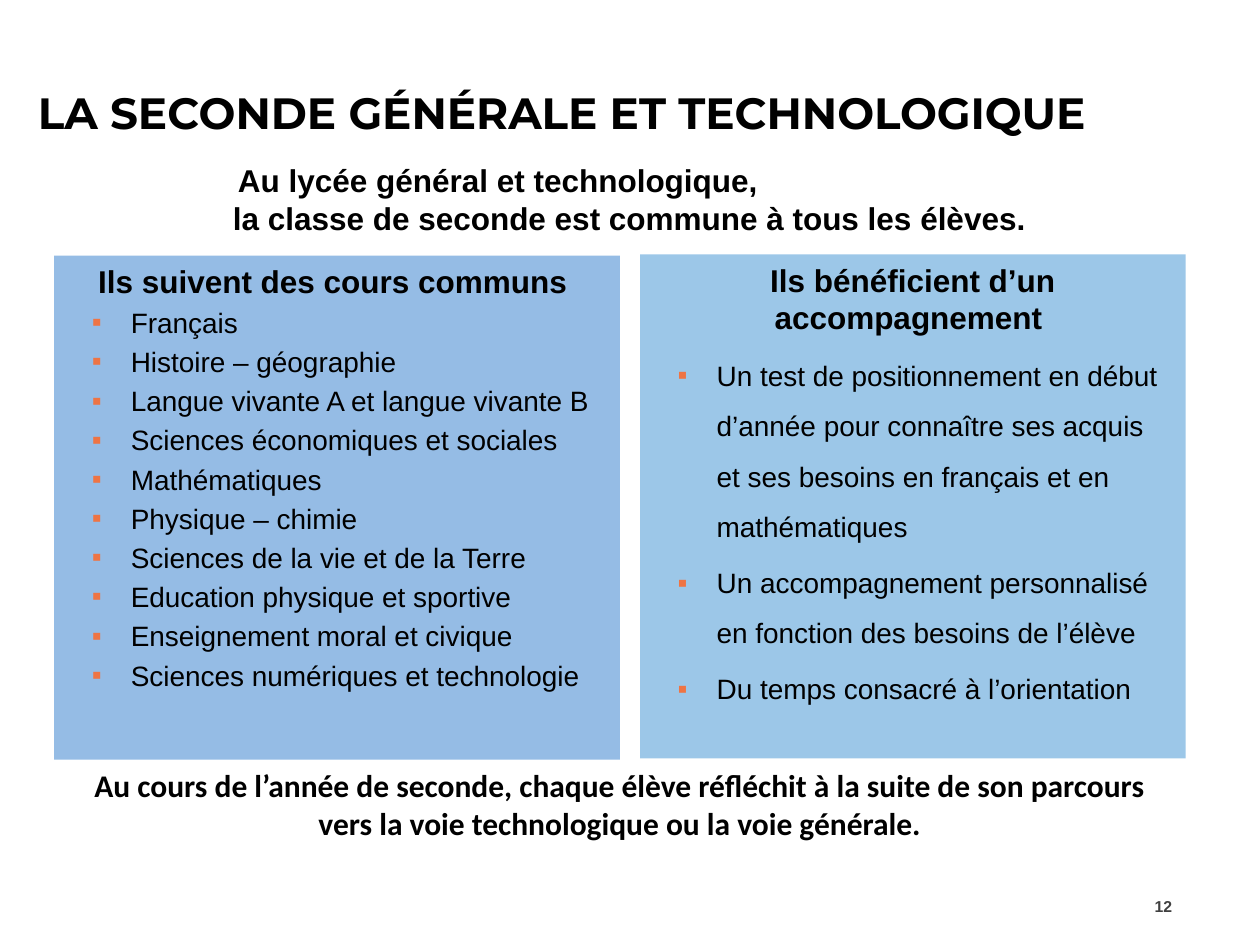
from dataclasses import dataclass

from lxml.etree import SubElement
from pptx import Presentation
from pptx.dml.color import RGBColor
from pptx.enum.shapes import MSO_SHAPE
from pptx.enum.text import MSO_ANCHOR, PP_ALIGN
from pptx.oxml.ns import qn
from pptx.util import Inches, Pt

COLORS = {
    "text": "000000",
    "number": "404040",
    "bullet": "EE7444",
    "courses": "95BCE5",
    "support": "9CC7E8",
}


@dataclass
class Box:
    left: float
    top: float
    width: float
    height: float

    def lengths(self) -> tuple:
        return tuple(Inches(v) for v in (self.left, self.top, self.width, self.height))


@dataclass
class Panel:
    box: Box
    fill: str
    heading: str
    items: list[str]
    line_spacing: float = 1.0


PANELS = [
    Panel(Box(5.08, 2.02, 4.33, 4), "support", "Ils bénéficient d’un accompagnement ", [
        "Un test de positionnement en début d’année pour connaître ses acquis "
        "et ses besoins en français et en mathématiques",
        "Un accompagnement personnalisé en fonction des besoins de l’élève",
        "Du temps consacré à l’orientation",
    ], 1.5),
    Panel(Box(0.43, 2.03, 4.49, 4), "courses", "Ils suivent des cours communs ", [
        "Français",
        "Histoire – géographie",
        "Langue vivante A et langue vivante B",
        "Sciences économiques et sociales",
        "Mathématiques",
        "Physique – chimie",
        "Sciences de la vie et de la Terre",
        "Education physique et sportive",
        "Enseignement moral et civique",
        "Sciences numériques et technologie",
    ]),
]


def write(paragraph, text: str, size: float, align=PP_ALIGN.LEFT, bold: bool = True,
          font: str = "Arial", color: str = "text") -> None:
    paragraph.alignment = align
    run = paragraph.add_run()
    run.text = text
    run.font.name = font
    run.font.size = Pt(size)
    run.font.bold = bold
    run.font.color.rgb = RGBColor.from_string(COLORS[color])


def add_text_frame(slide, box: Box, anchor=MSO_ANCHOR.TOP):
    frame = slide.shapes.add_textbox(*box.lengths()).text_frame
    frame.word_wrap = True
    frame.vertical_anchor = anchor
    return frame


def add_bullet(paragraph) -> None:
    properties = paragraph._p.get_or_add_pPr()
    properties.set("marL", str(Inches(0.51)))
    properties.set("indent", str(Inches(-0.31)))
    color = SubElement(properties, qn("a:buClr"))
    SubElement(color, qn("a:srgbClr"), val=COLORS["bullet"])
    SubElement(properties, qn("a:buFont"), typeface="Arial")
    SubElement(properties, qn("a:buChar"), char="▪")


def add_panel(slide, panel: Panel) -> None:
    rectangle = slide.shapes.add_shape(MSO_SHAPE.RECTANGLE, *panel.box.lengths())
    rectangle.shadow.inherit = False
    rectangle.fill.solid()
    rectangle.fill.fore_color.rgb = RGBColor.from_string(COLORS[panel.fill])
    rectangle.line.fill.background()
    frame = rectangle.text_frame
    frame.word_wrap = True
    frame.vertical_anchor = MSO_ANCHOR.TOP
    write(frame.paragraphs[0], panel.heading, 18, PP_ALIGN.CENTER)
    for item in panel.items:
        paragraph = frame.add_paragraph()
        paragraph.level = 1
        paragraph.line_spacing = panel.line_spacing
        paragraph.space_before = Pt(3.2)
        add_bullet(paragraph)
        write(paragraph, item, 16, bold=False)


def main() -> None:
    deck = Presentation()
    deck.slide_width, deck.slide_height = Inches(10), Inches(7.5)
    slide = deck.slides.add_slide(deck.slide_layouts[5])

    title = slide.shapes.title
    title.left, title.top, title.width, title.height = Box(0.2, 0.39, 9.53, 1).lengths()
    title.text_frame.vertical_anchor = MSO_ANCHOR.MIDDLE
    write(title.text_frame.paragraphs[0], "LA SECONDE GÉNÉRALE ET TECHNOLOGIQUE", 25,
          font="Montserrat")

    introduction = add_text_frame(slide, Box(1.69, 1.23, 6.61, 0.7))
    opening = introduction.paragraphs[0]
    opening._p.get_or_add_pPr().set("marL", str(Inches(0.1)))
    write(opening, "Au lycée général et technologique,", 18)
    write(introduction.add_paragraph(),
          "la classe de seconde est commune à tous les élèves.", 18, PP_ALIGN.CENTER)

    for panel in PANELS:
        add_panel(slide, panel)

    conclusion = add_text_frame(slide, Box(0.43, 6.03, 8.98, 0.71))
    write(conclusion.paragraphs[0],
          "Au cours de l’année de seconde, chaque élève réfléchit à la suite de son parcours "
          "vers la voie technologique ou la voie générale.",
          18, PP_ALIGN.CENTER, font="Calibri")

    page_number = add_text_frame(slide, Box(8.91, 6.99, 0.49, 0.4), MSO_ANCHOR.MIDDLE)
    write(page_number.paragraphs[0], "12", 9, PP_ALIGN.RIGHT, color="number")

    deck.save("out.pptx")


if __name__ == "__main__":
    main()
